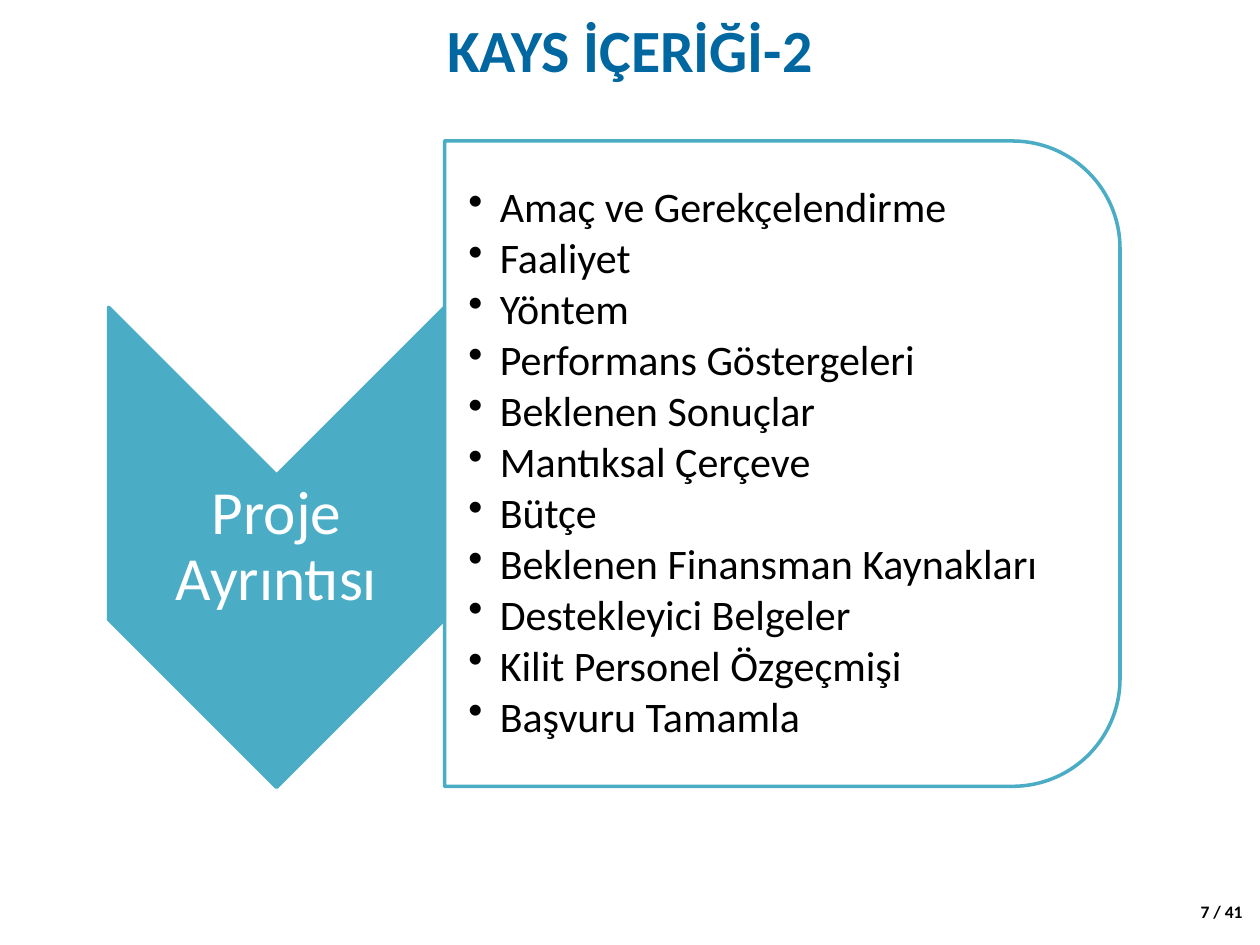
from lxml.etree import SubElement
from pptx import Presentation
from pptx.dml.color import RGBColor
from pptx.enum.shapes import MSO_SHAPE
from pptx.enum.text import MSO_ANCHOR, PP_ALIGN
from pptx.oxml.ns import qn
from pptx.util import Pt

TITLE = "KAYS İÇERİĞİ-2"
STAGE = "Proje Ayrıntısı"
TOPICS = [
    "Amaç ve Gerekçelendirme",
    "Faaliyet",
    "Yöntem",
    "Performans Göstergeleri",
    "Beklenen Sonuçlar",
    "Mantıksal Çerçeve",
    "Bütçe",
    "Beklenen Finansman Kaynakları",
    "Destekleyici Belgeler",
    "Kilit Personel Özgeçmişi",
    "Başvuru Tamamla",
]
PAGE_NUMBER = "7 / 41"

FONT = "Calibri"
BLUE = RGBColor(0x00, 0x67, 0xA0)
TEAL = RGBColor(0x4B, 0xAC, 0xC6)
WHITE = RGBColor(0xFF, 0xFF, 0xFF)
BLACK = RGBColor(0x00, 0x00, 0x00)

CHEVRON_AREA = (62, 175.6, 192, 274.4)
PANEL_AREA = (254, 80.6, 386, 368.8)
STAGE_AREA = (62, 272, 192, 82)
TOPICS_AREA = (254, 98.6, 368, 332.8)
TITLE_AREA = (36, 5, 648, 45.4)
NUMBER_AREA = (679, 511.2, 41, 21.6)


def add_turned_shape(page, kind, area, fill):
    left, top, width, height = area
    shift = (width - height) / 2
    shape = page.shapes.add_shape(
        kind, Pt(left + shift), Pt(top - shift), Pt(height), Pt(width))
    shape.rotation = 90
    shape.shadow.inherit = False
    shape.fill.solid()
    shape.fill.fore_color.rgb = fill
    shape.line.color.rgb = TEAL
    shape.line.width = Pt(2)
    return shape


def add_bullet(para):
    properties = para._p.get_or_add_pPr()
    properties.set("marL", str(Pt(18)))
    properties.set("indent", str(-Pt(18)))
    SubElement(properties, qn("a:buChar"), char="•")


def add_text(page, area, lines, size, color, bold=False, align=PP_ALIGN.CENTER,
             insets=(1.6, 1.6, 1.6, 1.6), spacing=1, after=0,
             bullets=False, wrap=True, anchor=MSO_ANCHOR.MIDDLE):
    box = page.shapes.add_textbox(*map(Pt, area))
    frame = box.text_frame
    frame.word_wrap = wrap
    frame.vertical_anchor = anchor
    (frame.margin_left, frame.margin_top,
     frame.margin_right, frame.margin_bottom) = map(Pt, insets)
    for index, line in enumerate(lines):
        para = frame.add_paragraph() if index else frame.paragraphs[0]
        para.alignment = align
        para.line_spacing = spacing
        para.space_after = Pt(after)
        if bullets:
            add_bullet(para)
        span = para.add_run()
        span.text = line
        span.font.name = FONT
        span.font.size = Pt(size)
        span.font.bold = bold
        span.font.color.rgb = color


def main():
    deck = Presentation()
    deck.slide_width, deck.slide_height = Pt(720), Pt(540)
    page = deck.slides.add_slide(deck.slide_layouts[6])

    add_text(page, NUMBER_AREA, [PAGE_NUMBER], 10, BLACK, bold=True,
             align=PP_ALIGN.LEFT, insets=(7.2, 3.6, 7.2, 3.6),
             wrap=False, anchor=MSO_ANCHOR.TOP)
    add_text(page, TITLE_AREA, [TITLE], 34.2, BLUE, bold=True)

    add_turned_shape(page, MSO_SHAPE.CHEVRON, CHEVRON_AREA, TEAL)
    add_text(page, STAGE_AREA, [STAGE], 35, WHITE, spacing=0.9)

    panel = add_turned_shape(
        page, MSO_SHAPE.ROUND_2_SAME_RECTANGLE, PANEL_AREA, WHITE)
    fill_color = panel._element.spPr.find(qn("a:solidFill"))[0]
    SubElement(fill_color, qn("a:alpha"), val="90000")
    add_text(page, TOPICS_AREA, TOPICS, 24, BLACK, align=PP_ALIGN.LEFT,
             insets=(13.6, 1.6, 1.6, 1.6), spacing=0.9, after=3.2, bullets=True)

    deck.save("out.pptx")


if __name__ == "__main__":
    main()
